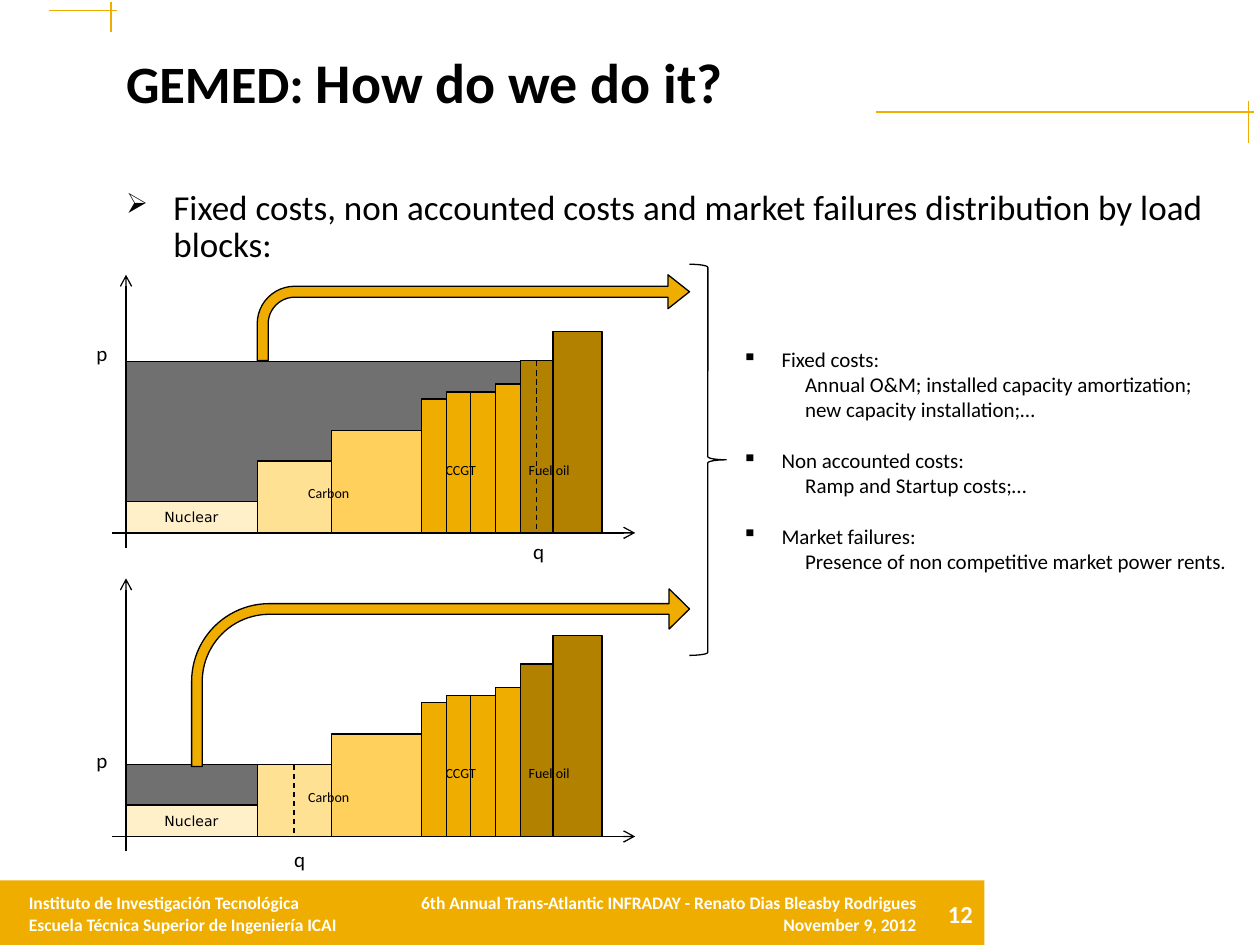
"""Build a slide on sharing out fixed costs and market failures by load block."""
from lxml import etree
from pptx import Presentation
from pptx import util as u
from pptx.dml.color import RGBColor
from pptx.enum import dml, shapes, text
from pptx.oxml import ns

Pt = u.Pt
GOLD = RGBColor(0xEF, 0xAD, 0x00)
BROWN = RGBColor(0xB3, 0x81, 0x00)
CREAM = RGBColor(0xFF, 0xF0, 0xC9)
SAND = RGBColor(0xFF, 0xE1, 0x93)
AMBER = RGBColor(0xFF, 0xD1, 0x5C)
GRAY = RGBColor(0x70, 0x70, 0x70)
BLACK = RGBColor(0, 0, 0)
WHITE = RGBColor(0xFF, 0xFF, 0xFF)
KIND = shapes.MSO_SHAPE
RIGHT = text.PP_ALIGN.RIGHT

LEFT = 72
BARS = [
    (75, 18, CREAM), (42.5, 41, SAND), (51.5, 58.5, AMBER),
    (14, 76.5, GOLD), (14, 80.5, GOLD), (14, 80.5, GOLD),
    (14.5, 85, GOLD), (18.5, 98.5, BROWN), (28, 115, BROWN),
]
LABELS = [("CCGT", 247.5, 44.5, 46), ("Fuel oil", 295, 44.5, 52),
          ("Carbon", 169, 31, 55)]
CHARTS = [
    {"base": 304.5, "price": 98, "wide": 258.5, "p": 113.5, "q": (297.5, -0.5), "cut": 306.5},
    {"base": 478, "price": 41, "wide": 142, "p": 54.5, "q": (161, 2), "cut": 168},
]
ARROWS = [
    ((147, 157, 247, 49), (0.128, 0.198, 0.25, 0.438)),
    ((109.5, 336.5, 284.5, 101.5), (0.06, 0.113, 0.115, 0.438)),
]
RULES = [(713.5, 57.5, 713.5, 81.5), (716.5, 64, 500.5, 64),
         (63.5, 1, 63.5, 18.5), (67, 6, 28, 6)]
FOOT = [
    ((16.5, 510, 208, 24.5), None,
     ["Instituto de Investigación Tecnológica",
      "Escuela Técnica Superior de Ingeniería ICAI"]),
    ((214, 510, 309.5, 24.5), RIGHT,
     ["6th Annual Trans-Atlantic INFRADAY - Renato Dias Bleasby Rodrigues",
      "November 9, 2012"]),
]
TITLE = [("GEMED: ", 30), ("How do we do it?", 32)]
LEAD = ("Fixed costs, non accounted costs and market failures "
        "distribution by load blocks:")
COSTS = [
    ("Fixed costs:", ["Annual O&M; installed capacity amortization;",
                      "new capacity installation;…"]),
    ("Non accounted costs:", ["Ramp and Startup costs;…"]),
    ("Market failures:", ["Presence of non competitive market power rents."]),
]


def style(item, size, color=BLACK, bold=False, name="Calibri"):
    look = {"size": Pt(size), "bold": bold, "name": name}
    for key, value in look.items():
        setattr(item.font, key, value)
    item.font.color.rgb = color


def indent(para, left, hang=0, mark=None, scale=100):
    props = para._p.get_or_add_pPr()
    props.set("marL", str(Pt(left)))
    props.set("indent", str(-Pt(hang)))
    if mark:
        size = etree.SubElement(props, ns.qn("a:buSzPct"))
        size.set("val", str(scale * 1000))
        etree.SubElement(props, ns.qn("a:buChar")).set("char", mark)


def frame(host, spot, pad=(7.2, 3.6, 7.2, 3.6)):
    body = host.add_textbox(*map(Pt, spot)).text_frame
    body.word_wrap = True
    sides = ("margin_left", "margin_top", "margin_right", "margin_bottom")
    for side, gap in zip(sides, pad):
        setattr(body, side, Pt(gap))
    return body


def write(body, lines, size, color=BLACK, bold=False, align=None):
    for num, line in enumerate(lines):
        para = body.add_paragraph() if num else body.paragraphs[0]
        para.text = line
        para.alignment = align
        style(para, size, color, bold)


def block(host, spot, fill, kind=KIND.RECTANGLE, edge=BLACK):
    shape = host.add_shape(kind, *map(Pt, spot))
    shape.shadow.inherit = False
    if fill is None:
        shape.fill.background()
    else:
        shape.fill.solid()
        shape.fill.fore_color.rgb = fill
    if edge is None:
        shape.line.fill.background()
    else:
        shape.line.color.rgb = edge
        shape.line.width = Pt(0.75)
    return shape


def rule(host, ends, color=BLACK, arrow=False, dash=False):
    line = host.add_connector(shapes.MSO_CONNECTOR.STRAIGHT, *map(Pt, ends))
    line.line.color.rgb = color
    line.line.width = Pt(0.75)
    if dash:
        line.line.dash_style = dml.MSO_LINE.DASH
    if arrow:
        tip = etree.SubElement(line.line._get_or_add_ln(), ns.qn("a:tailEnd"))
        tip.set("type", "arrow")
    etree.SubElement(line._element.spPr, ns.qn("a:effectLst"))


def chart(host, data):
    base, price, cut = data["base"], data["price"], data["cut"]
    low = BARS[0][1]
    block(host, (LEFT, base - price, data["wide"], price - low), GRAY)
    rule(host, (LEFT, base + 8.5, LEFT, base - 147.5), arrow=True)
    rule(host, (64, base, 363, base), arrow=True)
    left = LEFT
    for num, (wide, high, fill) in enumerate(BARS):
        bar = block(host, (left, base - high, wide, high), fill)
        if num == 0:
            body = bar.text_frame
            body.word_wrap = False
            body.vertical_anchor = text.MSO_ANCHOR.MIDDLE
            para = body.paragraphs[0]
            para.text = "Nuclear"
            para.alignment = text.PP_ALIGN.CENTER
            style(para, 8, name="DejaVu Sans")
        left += wide
    write(frame(host, (48, base - data["p"], 29, 28)), ["p"], 12)
    across, drop = data["q"]
    write(frame(host, (across, base + drop, 29, 28)), ["q"], 12)
    rule(host, (cut, base - price, cut, base), dash=True)
    for word, across, rise, wide in LABELS:
        write(frame(host, (across, base - rise, wide, 21)), [word], 8)


def main():
    deck = Presentation()
    deck.slide_width, deck.slide_height = Pt(720), Pt(540)
    slide = deck.slides.add_slide(deck.slide_layouts[6])
    host = slide.shapes

    block(host, (0, 503, 562.5, 37), GOLD, edge=None)
    write(frame(host, (523.5, 510, 39.5, 24.5)), ["12"], 14, WHITE, True, RIGHT)
    for spot, align, lines in FOOT:
        write(frame(host, spot, (0, 0, 0, 0)), lines, 10, WHITE, True, align)
    for ends in RULES:
        rule(host, ends, GOLD)

    body = frame(host, (65, 105, 648, 52))
    para = body.paragraphs[0]
    indent(para, 27, 27, "➢", 80)
    write(body, [LEAD], 20)
    para.line_spacing = 0.9

    for data, (spot, bends) in zip(CHARTS, ARROWS):
        chart(host.add_group_shape().shapes, data)
        arrow = block(host, spot, GOLD, KIND.BENT_ARROW)
        for num, bend in enumerate(bends):
            arrow.adjustments[num] = bend
    block(host, (394, 151, 21, 223.5), None, KIND.RIGHT_BRACE)

    body = frame(host, (417, 194.5, 317.5, 138))
    for num, (head, notes) in enumerate(COSTS):
        para = body.add_paragraph() if num else body.paragraphs[0]
        if num:
            para.space_before = Pt(14.5)
        indent(para, 22.5, 22.5, "▪")
        para.text = head
        style(para, 12)
        for note in notes:
            para = body.add_paragraph()
            indent(para, 36)
            para.text = note
            style(para, 12)

    body = frame(host, (67.5, 11.5, 646, 56), (4.5, 3, 4.5, 1.5))
    body.vertical_anchor = text.MSO_ANCHOR.BOTTOM
    para = body.paragraphs[0]
    para.line_spacing = 0.9
    for words, size in TITLE:
        run = para.add_run()
        run.text = words
        style(run, size, bold=True)

    deck.save("out.pptx")


if __name__ == "__main__":
    main()
